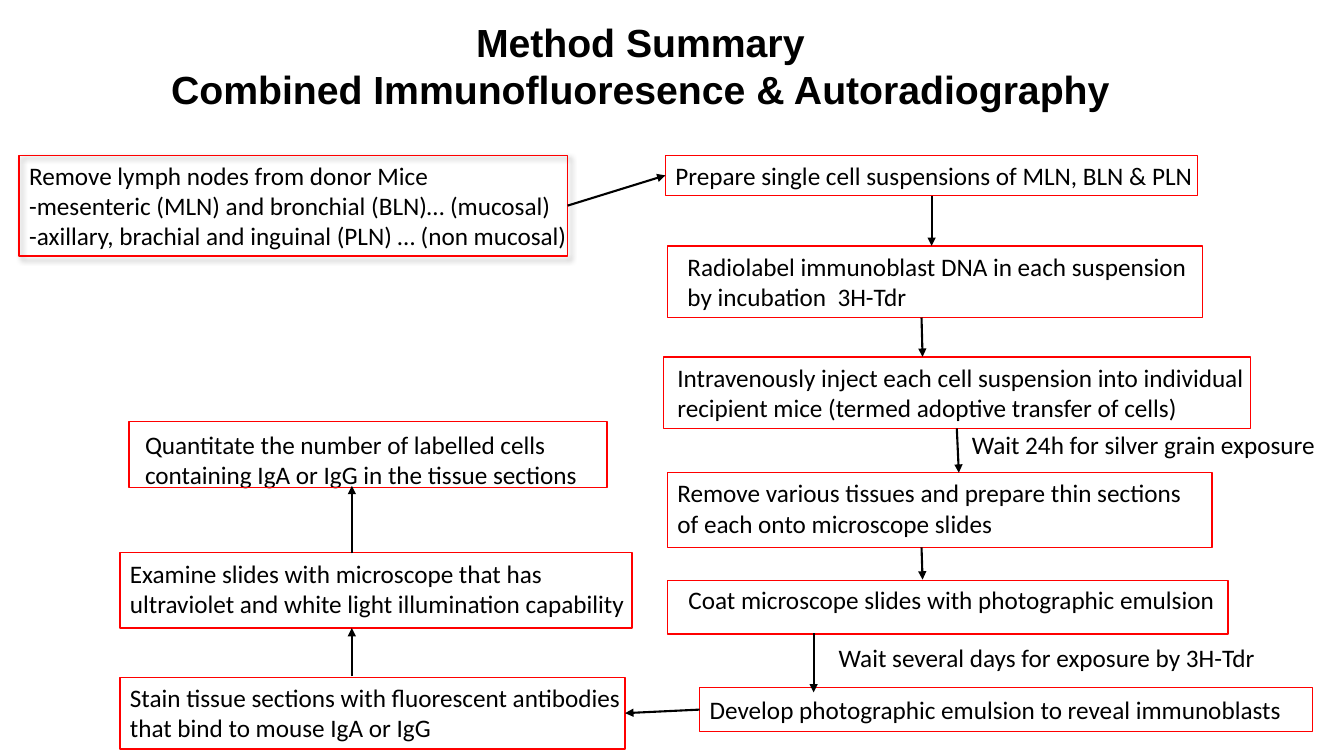
from dataclasses import dataclass

from lxml.etree import SubElement
from pptx import Presentation
from pptx.dml.color import RGBColor as RGB
from pptx.enum.shapes import MSO_CONNECTOR as CONNECTOR, MSO_SHAPE as SHAPE
from pptx.enum.text import MSO_AUTO_SIZE as AUTO_SIZE, PP_ALIGN as ALIGN
from pptx.oxml.ns import qn
from pptx.util import Inches, Pt


@dataclass(frozen=True)
class Theme:
    ink: RGB = RGB(0, 0, 0)
    frame: RGB = RGB(255, 0, 0)
    title_font: str = "Arial"
    body_font: str = "Calibri"
    title_size: Pt = Pt(28)
    body_size: Pt = Pt(18)
    frame_width: Pt = Pt(1)
    arrow_width: Pt = Pt(1.5)


THEME = Theme()
TOP, LEFT, BOTTOM, RIGHT = range(4)  # connection sites of a rectangle

# Each step: frame, text area, wrapping, lines (areas in grid cells)
STEPS = {
    "donor": ((1.9, 15.4, 54.4, 10), (1.9, 15.4, 57, 10.1), True, [
        "Remove lymph nodes from donor Mice",
        "-mesenteric (MLN) and bronchial (BLN)… (mucosal)",
        "-axillary, brachial and inguinal (PLN) … (non mucosal)"]),
    "prepare": ((66, 15.4, 52.8, 4), (66, 15.4, 56.8, 4), False, [
        "Prepare single cell suspensions of MLN, BLN & PLN"]),
    "radiolabel": ((66.2, 24.4, 53.1, 7.1), (67.2, 24.4, 53.1, 7.1), True, [
        "Radiolabel immunoblast DNA in each suspension by incubation  3H-Tdr"]),
    "inject": ((65.8, 35.4, 58.2, 7.1), (66.2, 35.4, 61.4, 7.1), True, [
        "Intravenously inject each cell suspension into individual "
        "recipient mice (termed adoptive transfer of cells)"]),
    "section": ((66.2, 46.9, 54, 7.4), (66.2, 46.9, 54.5, 7.1), True, [
        "Remove various tissues and prepare thin sections "
        "of each onto microscope slides"]),
    "coat": ((66.2, 57.6, 55.6, 5.3), (67.3, 57.5, 54.8, 4), False, [
        "Coat microscope slides with photographic emulsion"]),
    "develop": ((69.4, 68.2, 60.8, 4.4), (69.4, 68.4, 66.3, 4), True, [
        "Develop photographic emulsion to reveal immunoblasts"]),
    "stain": ((11.9, 67.2, 50.1, 7.1), (11.9, 67.2, 52.4, 7.1), True, [
        "Stain tissue sections with fluorescent antibodies "
        "that bind to mouse IgA or IgG"]),
    "examine": ((11.9, 54.8, 50.8, 7.5), (11.9, 54.9, 51.6, 7.1), True, [
        "Examine slides with microscope that has "
        "ultraviolet and white light illumination capability"]),
    "quantitate": ((12.8, 41.8, 47.4, 6.6), (13.4, 42.1, 48, 7.1), True, [
        "Quantitate the number of labelled cells "
        "containing IgA or IgG in the tissue sections"]),
}

# Each end is a (step, side) joint or a (column, row) point
ARROWS = [
    (("donor", RIGHT), ("prepare", LEFT)),
    (("prepare", BOTTOM), (92.4, 24.4)),
    ((91.4, 31.5), (91.5, 35.4)),
    (("inject", BOTTOM), (95.1, 46.9)),
    ((91.4, 54.3), (91.5, 57.5)),
    ((80.7, 62.8), (80.7, 68.7)),
    (("develop", LEFT), ("stain", RIGHT)),
    ((34.9, 67.1), (34.9, 62.3)),
    ((34.9, 54.9), (34.9, 48.2)),
]


def grid(*cells):
    """Turn grid cells, ten to the inch, into lengths."""
    return [Inches(cell / 10) for cell in cells]


def add_text(slide, area, lines, wrap=True, title=False):
    tf = slide.shapes.add_textbox(*grid(*area)).text_frame
    tf.word_wrap = wrap
    tf.auto_size = AUTO_SIZE.SHAPE_TO_FIT_TEXT
    tf.text = "\n".join(lines)
    for p in tf.paragraphs:
        p.alignment = ALIGN.CENTER if title else ALIGN.LEFT
        p.font.name = THEME.title_font if title else THEME.body_font
        p.font.size = THEME.title_size if title else THEME.body_size
        p.font.bold = title
        p.font.color.rgb = THEME.ink


def add_frame(slide, area):
    sp = slide.shapes.add_shape(SHAPE.RECTANGLE, *grid(*area))
    sp.shadow.inherit = False
    sp.fill.background()
    sp.line.color.rgb = THEME.frame
    sp.line.width = THEME.frame_width
    return sp


def add_shadow(sp):
    effects = sp._element.spPr.find(qn("a:effectLst"))
    shadow = SubElement(effects, qn("a:outerShdw"), blurRad=str(Pt(4)),
                        dist=str(Pt(3)), dir=str(45 * 60000), rotWithShape="0")
    color = SubElement(shadow, qn("a:srgbClr"), val=str(THEME.ink))
    SubElement(color, qn("a:alpha"), val="40000")


def add_arrow(slide, frames, start, end):
    line = slide.shapes.add_connector(CONNECTOR.STRAIGHT, 0, 0, 0, 0)
    if start[0] in frames:
        line.begin_connect(frames[start[0]], start[1])
    else:
        line.begin_x, line.begin_y = grid(*start)
    if end[0] in frames:
        line.end_connect(frames[end[0]], end[1])
    else:
        line.end_x, line.end_y = grid(*end)
    line.line.color.rgb = THEME.ink
    line.line.width = THEME.arrow_width
    SubElement(line.line._get_or_add_ln(), qn("a:tailEnd"), type="triangle")
    SubElement(line._element.spPr, qn("a:effectLst"))


def main():
    prs = Presentation()
    prs.slide_width, prs.slide_height = Inches(13.33), Inches(7.5)
    slide = prs.slides.add_slide(prs.slide_layouts[6])

    # Title
    add_text(slide, (15.4, 1.3, 96.2, 10.4),
             ["Method Summary", "Combined Immunofluoresence & Autoradiography"],
             wrap=False, title=True)

    # Framed steps
    frames = {}
    for name, (frame, area, wrap, lines) in STEPS.items():
        add_text(slide, area, lines, wrap)
        frames[name] = add_frame(slide, frame)
    add_shadow(frames["donor"])

    # Waiting times
    add_text(slide, (95.4, 42.1, 36.4, 4),
             ["Wait 24h for silver grain exposure"], wrap=False)
    add_text(slide, (82.2, 63.2, 53.5, 4),
             ["Wait several days for exposure by 3H-Tdr"])

    # Flow
    for start, end in ARROWS:
        add_arrow(slide, frames, start, end)

    prs.save("out.pptx")


if __name__ == "__main__":
    main()
